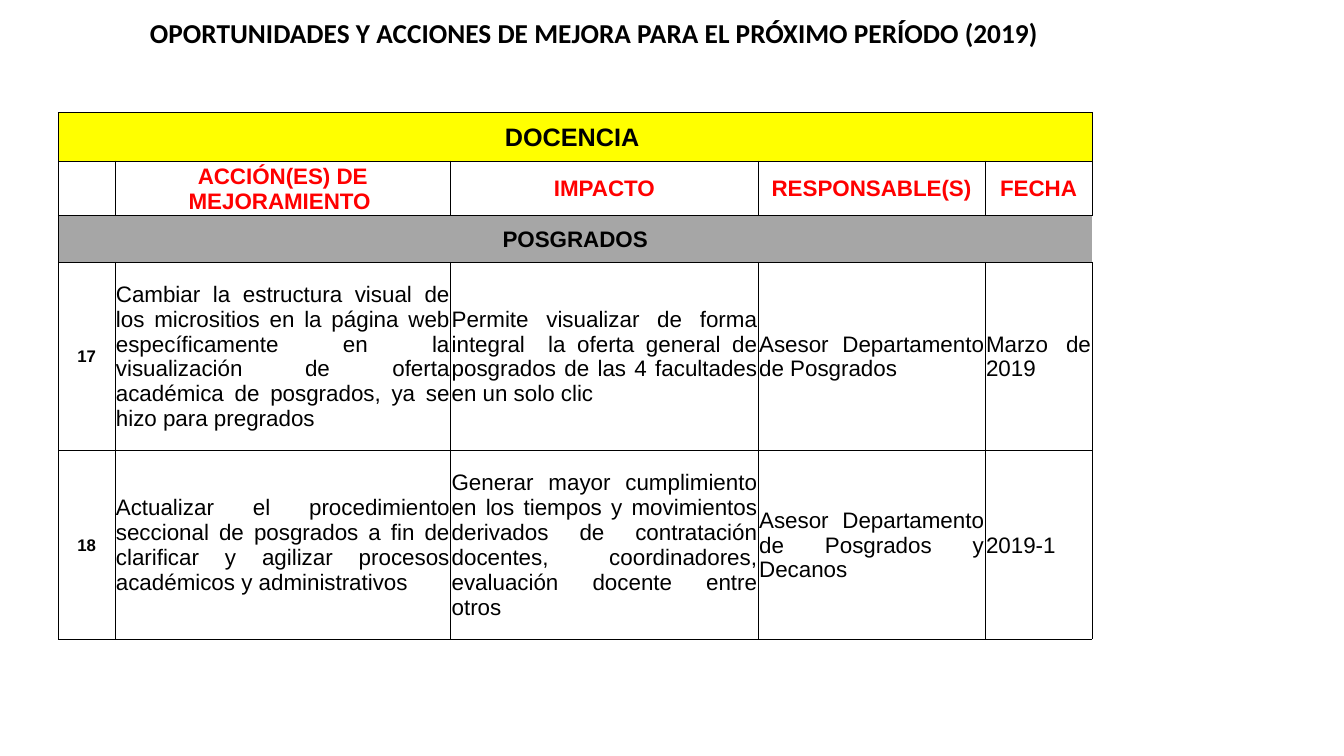
"""Build the slide of improvement actions for the DOCENCIA area."""
from dataclasses import dataclass

from lxml.etree import SubElement
from pptx import Presentation
from pptx.dml.color import RGBColor
from pptx.enum.text import MSO_ANCHOR, MSO_AUTO_SIZE, PP_ALIGN
from pptx.oxml.ns import qn
from pptx.slide import Slide
from pptx.table import Table, _Cell
from pptx.text.text import _Paragraph
from pptx.util import Inches, Pt

BLACK = RGBColor(0x00, 0x00, 0x00)
WHITE = RGBColor(0xFF, 0xFF, 0xFF)
RED = RGBColor(0xFF, 0x00, 0x00)
YELLOW = RGBColor(0xFF, 0xFF, 0x00)
GRAY = RGBColor(0xA6, 0xA6, 0xA6)

TABLE_LEFT = 0.58
COLUMN_WIDTHS = (0.56, 3.33, 3.05, 2.25, 1.06)
HEADINGS = ("", "ACCIÓN(ES) DE MEJORAMIENTO ", "IMPACTO", "RESPONSABLE(S)", "FECHA")
THIN = 0.5
THICK = 1


@dataclass(frozen=True)
class Action:
    number: str
    improvement: str
    impact: str
    responsible: str
    date: str


ACTIONS = (
    Action(
        "17",
        "Cambiar la estructura visual de los micrositios en la página web específicamente "
        "en la visualización de oferta académica de posgrados, ya se hizo para pregrados",
        "Permite visualizar de forma integral  la oferta general de posgrados "
        "de las 4 facultades en un solo clic",
        "Asesor Departamento de Posgrados",
        "Marzo de 2019",
    ),
    Action(
        "18",
        "Actualizar el procedimiento seccional de posgrados a fin de clarificar "
        "y agilizar procesos académicos y administrativos",
        "Generar mayor cumplimiento en los tiempos y movimientos derivados de contratación "
        "docentes, coordinadores, evaluación docente entre otros",
        "Asesor Departamento de Posgrados y Decanos",
        "2019-1",
    ),
)


def write(para: _Paragraph, text: str, *, size: float = 16, font: str = "Arial",
          color: RGBColor = BLACK, bold: bool = True,
          align: PP_ALIGN = PP_ALIGN.CENTER) -> None:
    para.alignment = align
    span = para.add_run()
    span.text = text
    span.font.size = Pt(size)
    span.font.name = font
    span.font.bold = bold
    span.font.color.rgb = color


def set_borders(cell: _Cell, left: float = THIN, right: float = THIN,
                top: float = THIN, bottom: float = THIN) -> None:
    properties = cell._tc.get_or_add_tcPr()
    sides = {"a:lnL": left, "a:lnR": right, "a:lnT": top, "a:lnB": bottom}
    for position, (tag, width) in enumerate(sides.items()):
        line = SubElement(properties, qn(tag), w=str(Pt(width)))
        if width:
            fill = SubElement(line, qn("a:solidFill"))
            SubElement(fill, qn("a:srgbClr"), val=str(BLACK))
        else:
            SubElement(line, qn("a:noFill"))
        properties.insert(position, line)


def format_cell(cell: _Cell, fill: RGBColor | None = None, **borders: float) -> None:
    cell.vertical_anchor = MSO_ANCHOR.MIDDLE
    cell.margin_left = cell.margin_right = cell.margin_top = Inches(0.01)
    cell.margin_bottom = 0
    if fill is None:
        cell.fill.background()
    else:
        cell.fill.solid()
        cell.fill.fore_color.rgb = fill
    set_borders(cell, **borders)


def add_grid(page: Slide, top: float, row_heights: tuple[float, ...]) -> Table:
    frame = page.shapes.add_table(
        len(row_heights), len(COLUMN_WIDTHS), Inches(TABLE_LEFT), Inches(top),
        Inches(sum(COLUMN_WIDTHS)), Inches(sum(row_heights)))
    grid = frame.table
    grid.first_row = grid.horz_banding = False
    for column, width in zip(grid.columns, COLUMN_WIDTHS):
        column.width = Inches(width)
    for row, height in zip(grid.rows, row_heights):
        row.height = Inches(height)
    return grid


def add_band(grid: Table, text: str, fill: RGBColor, size: float, **borders: float) -> None:
    for cell in grid.rows[0].cells:
        format_cell(cell, fill, **borders)
    first = grid.cell(0, 0)
    first.merge(grid.cell(0, len(COLUMN_WIDTHS) - 1))
    write(first.text_frame.paragraphs[0], text, size=size)


def add_title(page: Slide, text: str) -> None:
    title = page.shapes.title
    title.left, title.top = Inches(0.58), Inches(0.05)
    title.width, title.height = Inches(10.63), Inches(0.55)
    title.text_frame.auto_size = MSO_AUTO_SIZE.NONE
    title.text_frame.word_wrap = True
    title.text_frame.vertical_anchor = MSO_ANCHOR.MIDDLE
    write(title.text_frame.paragraphs[0], text, size=19.5, font="Calibri")


def add_headings(page: Slide) -> None:
    grid = add_grid(page, 1.12, (0.48, 0.54))
    add_band(grid, "DOCENCIA ", YELLOW, 18, left=THICK, top=THICK, bottom=THICK)
    for cell, heading in zip(grid.rows[1].cells, HEADINGS):
        format_cell(cell, top=THICK)
        if heading:
            write(cell.text_frame.paragraphs[0], heading, color=RED)


def add_actions(page: Slide) -> None:
    grid = add_grid(page, 2.14, (0.46, 1.87, 1.87))
    add_band(grid, "POSGRADOS", GRAY, 16, left=THICK, right=0)
    for row, action in enumerate(ACTIONS, start=1):
        number, *details = grid.rows[row].cells
        format_cell(number, WHITE)
        write(number.text_frame.paragraphs[0], action.number, size=12)
        texts = (action.improvement, action.impact, action.responsible, action.date)
        for cell, text in zip(details, texts):
            format_cell(cell, WHITE)
            write(cell.text_frame.paragraphs[0], text, bold=False, align=PP_ALIGN.JUSTIFY)


def main() -> None:
    deck = Presentation()
    deck.slide_width, deck.slide_height = Inches(13.33), Inches(7.5)
    page = deck.slides.add_slide(deck.slide_layouts.get_by_name("Title Only"))
    add_title(page, "OPORTUNIDADES Y ACCIONES DE MEJORA PARA EL PRÓXIMO PERÍODO (2019)")
    add_headings(page)
    add_actions(page)
    deck.save("out.pptx")


if __name__ == "__main__":
    main()
